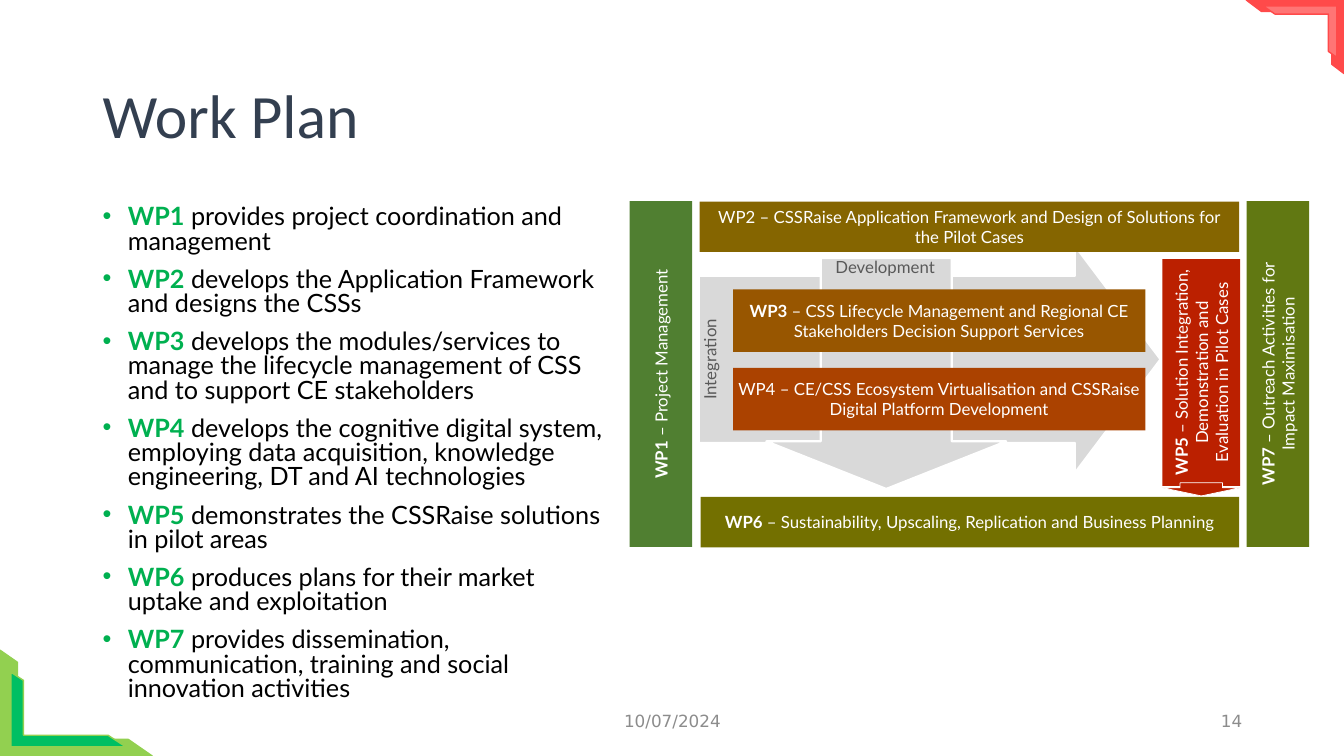
"""Build the Work Plan slide: seven work packages as a list and as a diagram."""
from lxml import etree
from pptx import Presentation
from pptx.dml.color import RGBColor
from pptx.enum.shapes import MSO_SHAPE
from pptx.enum.text import MSO_ANCHOR, PP_ALIGN
from pptx.oxml.ns import qn
from pptx.util import Inches, Pt

ROUND, HEXAGON = MSO_SHAPE.ROUNDED_RECTANGLE, MSO_SHAPE.HEXAGON
RIGHT_ARROW, DOWN_ARROW = MSO_SHAPE.RIGHT_ARROW, MSO_SHAPE.DOWN_ARROW
HALF_FRAME = MSO_SHAPE.HALF_FRAME
TOP, MIDDLE = MSO_ANCHOR.TOP, MSO_ANCHOR.MIDDLE
LEFT, CENTER, RIGHT = PP_ALIGN.LEFT, PP_ALIGN.CENTER, PP_ALIGN.RIGHT

COLORS = {
    "title": "333F50", "text": "000000", "key": "00B050", "footer": "8C8C8C",
    "white": "FFFFFF", "label": "595959", "arrow": "D9D9D9",
    "wp1": "507F31", "wp2": "856500", "wp3": "985600", "wp4": "AB4200",
    "wp5": "BB2000", "wp6": "737000", "wp7": "617812",
    "lime": "92D050", "green": "00BF63", "red": "FF4A4A", "pink": "FF7575",
}
MARGINS = ("margin_left", "margin_top", "margin_right", "margin_bottom")

deck = Presentation()
deck.slide_width, deck.slide_height = Inches(13.33), Inches(7.5)
page = deck.slides.add_slide(deck.slide_layouts[6])


def add_span(para, text, color, size, name="Lato", bold=False):
    """Append a formatted run to a paragraph."""
    span = para.add_run()
    span.text = text
    span.font.color.rgb = RGBColor.from_string(COLORS[color])
    for attribute, value in {"size": Pt(size), "name": name, "bold": bold}.items():
        setattr(span.font, attribute, value)


def add_block(preset, place, fill=None, line=None, weight=1, turn=0, adjust=()):
    """Add a preset shape with its fill, outline, rotation and adjustments."""
    block = page.shapes.add_shape(preset, *map(Inches, place))
    block.shadow.inherit = False
    block.rotation = turn
    for index, value in enumerate(adjust):
        block.adjustments[index] = value
    if fill:
        block.fill.solid()
        block.fill.fore_color.rgb = RGBColor.from_string(COLORS[fill])
    else:
        block.fill.background()
    if line:
        block.line.color.rgb = RGBColor.from_string(COLORS[line])
        block.line.width = Pt(weight)
    else:
        block.line.fill.background()
    return block


plain_texts = [
    ("Work Plan", (0.92, 0.4, 11.5, 1.45), LEFT, "title", 44, "Calibri"),
    ("10/07/2024", (4.42, 6.95, 4.5, 0.4), CENTER, "footer", 12, "DejaVu Sans"),
    ("14", (9.42, 6.95, 3, 0.4), RIGHT, "footer", 12, "DejaVu Sans"),
]
for text, place, align, color, size, name in plain_texts:
    frame = page.shapes.add_textbox(*map(Inches, place)).text_frame
    frame.word_wrap, frame.vertical_anchor = True, MIDDLE
    para = frame.paragraphs[0]
    para.alignment = align
    add_span(para, text, color, size, name)

tasks = [
    "provides project coordination and management",
    "develops the Application Framework and designs the CSSs",
    "develops the modules/services to manage the lifecycle management of CSS "
    "and to support CE stakeholders",
    "develops the cognitive digital system, employing data acquisition, "
    "knowledge engineering, DT and AI technologies",
    "demonstrates the CSSRaise solutions in pilot areas",
    "produces plans for their market uptake and exploitation",
    "provides dissemination, communication, training and social innovation activities",
]
frame = page.shapes.add_textbox(*map(Inches, (0.92, 2, 5.23, 5.1))).text_frame
frame.word_wrap, frame.vertical_anchor = True, TOP
for number, task in enumerate(tasks, 1):
    para = frame.paragraphs[0] if number == 1 else frame.add_paragraph()
    properties = para._p.get_or_add_pPr()
    properties.set("marL", str(Inches(0.25)))
    properties.set("indent", str(-Inches(0.25)))
    etree.SubElement(properties, qn("a:buFont")).set("typeface", "Arial")
    etree.SubElement(properties, qn("a:buChar")).set("char", "•")
    para.line_spacing = 0.8
    para.space_before = Pt(0 if number == 1 else 10)
    add_span(para, f"WP{number}", "key", 18, bold=True)
    add_span(para, f" {task}", "text", 18)

add_block(RIGHT_ARROW, (6.93, 2.44, 4.58, 2.25), "arrow", "white", 1.5,
          adjust=(0.737, 0.377))
add_block(DOWN_ARROW, (7.6, 2.56, 2.38, 2.29), "arrow", "white", 1.5,
          adjust=(0.546, 0.206))

packages = [
    (ROUND, (10.79, 3.31, 2.25, 0.77), 270, "wp5", 0.04, "WP5 ",
     "– Solution Integration, Demonstration and Evaluation in Pilot Cases"),
    (ROUND, (7.27, 2.87, 4.09, 0.62), 0, "wp3", 0.04, "WP3 ",
     "– CSS Lifecycle Management and Regional CE Stakeholders Decision Support Services"),
    (ROUND, (7.27, 3.65, 4.09, 0.62), 0, "wp4", 0.04, "",
     "WP4 – CE/CSS Ecosystem Virtualisation and CSSRaise Digital Platform Development"),
    (ROUND, (6.3, 3.43, 1.58, 0.27), 270, None, 0, "", "Integration"),
    (ROUND, (7.91, 2.51, 1.74, 0.37), 0, None, 0, "", "Development"),
    (HEXAGON, (4.84, 3.4, 3.43, 0.62), 270, "wp1", None, "WP1 ", "– Project Management"),
    (HEXAGON, (10.96, 3.4, 3.43, 0.62), 270, "wp7", None, "WP7 ",
     "– Outreach Activities for Impact Maximisation"),
    (ROUND, (6.95, 4.93, 5.34, 0.5), 0, "wp6", None, "WP6 ",
     "– Sustainability, Upscaling, Replication and Business Planning"),
    (ROUND, (6.94, 2, 5.35, 0.5), 0, "wp2", None, "",
     "WP2 – CSSRaise Application Framework and Design of Solutions for the Pilot Cases"),
]
for preset, place, turn, fill, margin, key, text in packages:
    block = add_block(preset, place, fill, turn=turn, adjust=(0,))
    frame = block.text_frame
    frame.word_wrap, frame.vertical_anchor = True, MIDDLE
    if margin is not None:
        for side in MARGINS:
            setattr(frame, side, Inches(margin))
    para = frame.paragraphs[0]
    para.alignment = CENTER
    if not fill:
        para.line_spacing = Pt(7)
    color = "white" if fill else "label"
    if key:
        add_span(para, key, color, 12, bold=True)
    add_span(para, text, color, 12)

add_block(DOWN_ARROW, (11.53, 4.79, 0.77, 0.13), "wp5", "white", 0.5,
          adjust=(0.546, 0.621))

corners = [
    ((0.23, 6.22, 1.05, 1.51), 270, "lime", "lime"),
    ((0.31, 6.47, 0.74, 1.14), 270, "green", "lime"),
    ((12.48, -0.12, 0.73, 0.97), 90, "red", "red"),
    ((12.64, -0.05, 0.51, 0.73), 90, "pink", "red"),
]
for place, turn, fill, line in corners:
    add_block(HALF_FRAME, place, fill, line, turn=turn, adjust=(0.166, 0.157))

deck.save("out.pptx")
